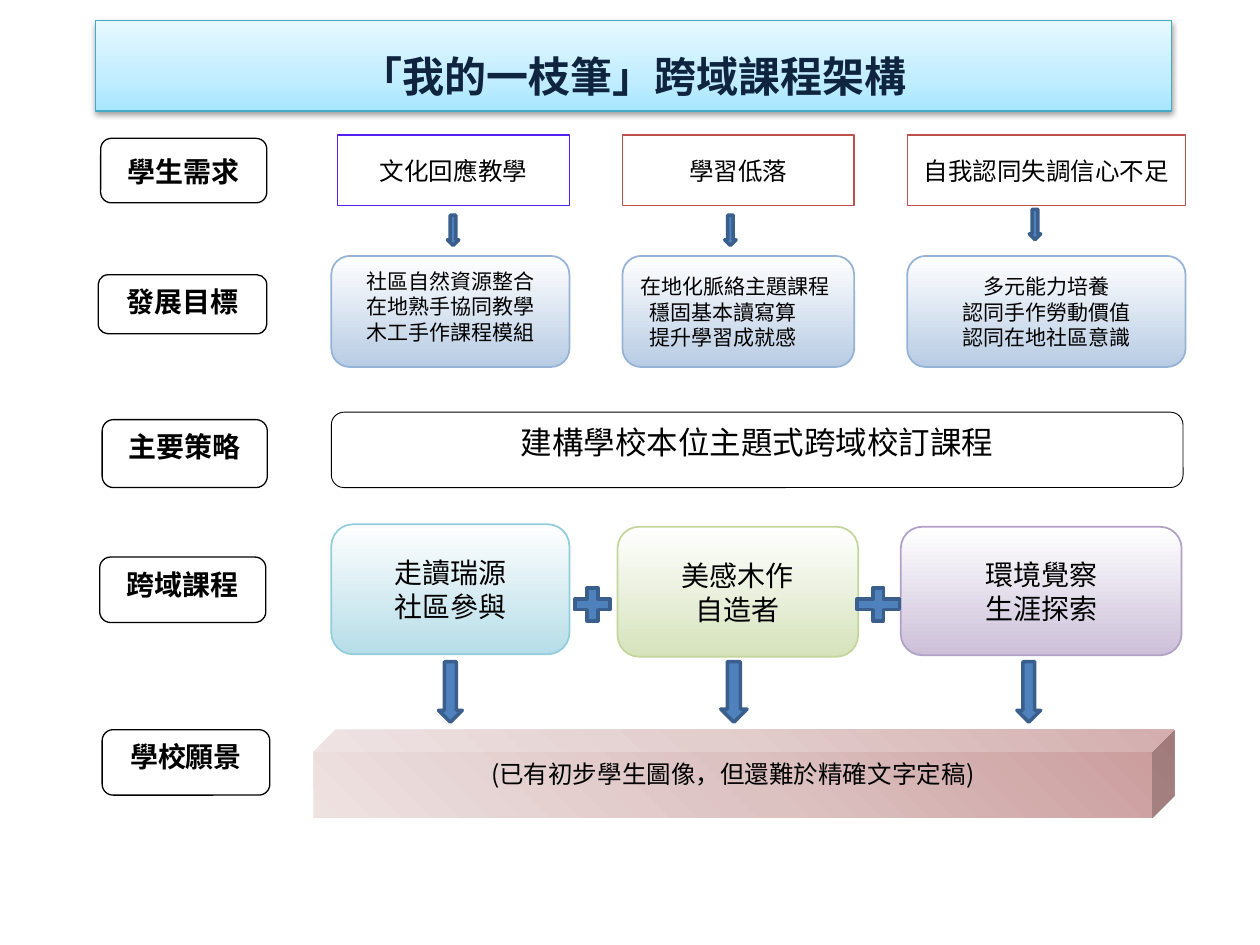
from lxml import etree
from pptx import Presentation
from pptx.dml.color import RGBColor
from pptx.enum.shapes import MSO_SHAPE
from pptx.enum.text import MSO_ANCHOR, PP_ALIGN
from pptx.oxml.ns import qn
from pptx.util import Cm, Pt

ROUNDED = MSO_SHAPE.ROUNDED_RECTANGLE
RECTANGLE = MSO_SHAPE.RECTANGLE
CUBE = MSO_SHAPE.CUBE
DOWN = MSO_SHAPE.DOWN_ARROW
PLUS = MSO_SHAPE.MATH_PLUS
TOP, MIDDLE = MSO_ANCHOR.TOP, MSO_ANCHOR.MIDDLE
LEFT, CENTER = PP_ALIGN.LEFT, PP_ALIGN.CENTER

COLORS = {
    "white": "FFFFFF", "black": "000000", "title": "0F243E", "title_edge": "46AAC5",
    "violet": "551FEF", "red": "C0504D", "arrow": "4F81BD", "arrow_edge": "3A5F8C",
    "goal": "B8CCE4", "goal_edge": "95B3D7",
    "aqua": "B6DDE8", "aqua_edge": "92CDDC",
    "green": "D6E3BC", "green_edge": "C2D69B",
    "purple": "CCC0D9", "purple_edge": "B2A1C7",
    "sky_dark": "A7E6FF", "sky": "C1EDFF", "sky_light": "E7F8FF",
    "rose_dark": "CA9A9A", "rose": "DDC2C2", "rose_light": "EEE2E1",
}
BODY_FONT, TITLE_FONT = "Noto Sans CJK SC", "Noto Sans CJK JP"
LINE_RATIO = 1.22


def rgb(name):
    return RGBColor.from_string(COLORS[name])


def add_xml(parent, tag, **attributes):
    values = {key: str(value) for key, value in attributes.items()}
    return etree.SubElement(parent, qn(tag), values)


def write_text(shape, text, size, font=BODY_FONT, color="black", bold=False,
               anchor=MIDDLE, align=CENTER, indents=()):
    """Fill the shape with one paragraph per line; indents are in cm, by line."""
    frame = shape.text_frame
    frame.word_wrap = True
    frame.vertical_anchor = anchor
    frame.margin_left = frame.margin_right = Cm(0.25)
    frame.margin_top = frame.margin_bottom = Cm(0.13)
    frame.text = text
    for paragraph in frame.paragraphs:
        paragraph.alignment = align
        paragraph.line_spacing = Pt(round(size * LINE_RATIO, 1))
        run = paragraph.runs[0]
        run.font.size, run.font.bold, run.font.name = Pt(size), bold, font
        run.font.color.rgb = rgb(color)
        add_xml(run.font._element, "a:ea", typeface=font)
    for paragraph, indent in zip(frame.paragraphs, indents):
        paragraph._p.get_or_add_pPr().set("marL", str(Cm(indent)))


def paint_gradient(shape, stops, angle=90, corner=False):
    """Linear gradient from (percent, colour) stops, or radial from the top right."""
    shape.fill.gradient()
    gradient = shape._element.spPr.find(qn("a:gradFill"))
    for child in list(gradient):
        gradient.remove(child)
    stop_list = add_xml(gradient, "a:gsLst")
    for percent, color in stops:
        stop = add_xml(stop_list, "a:gs", pos=percent * 1000)
        add_xml(stop, "a:srgbClr", val=COLORS[color])
    if corner:
        center = add_xml(gradient, "a:path", path="circle")
        add_xml(center, "a:fillToRect", l=100000, b=100000)
    else:
        add_xml(gradient, "a:lin", ang=angle * 60000, scaled=0)


class CourseMap:
    def __init__(self, presentation):
        self.slide = presentation.slides.add_slide(presentation.slide_layouts[5])

    def outline(self, shape, color, width):
        shape.line.color.rgb = rgb(color)
        shape.line.width = Pt(width)

    def shape(self, kind, box, fill="white", edge=None, width=0.75):
        shape = self.slide.shapes.add_shape(kind, *map(Cm, box))
        shape.shadow.inherit = False
        shape.fill.solid()
        shape.fill.fore_color.rgb = rgb(fill)
        if edge:
            self.outline(shape, edge, width)
        else:
            shape.line.fill.background()
        return shape

    def title(self, text, box):
        title = self.slide.shapes.title
        title.left, title.top, title.width, title.height = map(Cm, box)
        properties = title._element.spPr
        add_xml(add_xml(properties, "a:prstGeom", prst="roundRect"), "a:avLst")
        paint_gradient(title, [(0, "sky_dark"), (35, "sky"), (100, "sky_light")], angle=270)
        self.outline(title, "title_edge", 0.75)
        shadow = add_xml(add_xml(properties, "a:effectLst"), "a:outerShdw",
                         blurRad=Pt(3.1), dist=Pt(1.6), dir=5400000, rotWithShape=0)
        add_xml(add_xml(shadow, "a:srgbClr", val=COLORS["black"]), "a:alpha", val=38000)
        write_text(title, text, 24, font=TITLE_FONT, color="title", bold=True)
        title.text_frame.margin_top = Cm(0.52)

    def label(self, text, box, anchor=TOP):
        label = self.shape(ROUNDED, box, edge="black")
        write_text(label, text, 16, bold=True, anchor=anchor)

    def need(self, text, box, edge):
        write_text(self.shape(RECTANGLE, box, edge=edge), text, 14)

    def card(self, text, box, color, size, **text_format):
        card = self.shape(ROUNDED, box, edge=color + "_edge", width=1)
        paint_gradient(card, [(0, "white"), (100, color)])
        write_text(card, text, size, **text_format)

    def strategy(self, text, box):
        banner = self.shape(ROUNDED, box, edge="black", width=0.5)
        write_text(banner, text, 18, anchor=TOP)

    def vision(self, text, box):
        block = self.shape(CUBE, box)
        paint_gradient(block, [(0, "rose_dark"), (50, "rose"), (100, "rose_light")], corner=True)
        write_text(block, text, 14, anchor=TOP)

    def sign(self, kind, box):
        self.shape(kind, box, fill="arrow", edge="arrow_edge", width=2)


def main():
    presentation = Presentation()
    presentation.slide_width, presentation.slide_height = Cm(25.4), Cm(19.05)
    course_map = CourseMap(presentation)
    course_map.title("「我的一枝筆」跨域課程架構", (1.93, 0.41, 21.69, 1.83))

    course_map.label("學生需求", (2.03, 2.79, 3.35, 1.3), anchor=MIDDLE)
    course_map.label("發展目標", (1.98, 5.54, 3.4, 1.19))
    course_map.label("主要策略", (2.06, 8.46, 3.33, 1.37))
    course_map.label("跨域課程", (2.01, 11.23, 3.35, 1.32))
    course_map.label("學校願景", (2.06, 14.71, 3.38, 1.32))

    needs = [("文化回應教學", 6.81, 4.67, "violet"),
             ("學習低落", 12.55, 4.67, "red"),
             ("自我認同失調信心不足", 18.29, 5.61, "red")]
    for text, left, width, edge in needs:
        course_map.need(text, (left, 2.72, width, 1.42), edge)

    goals = [("社區自然資源整合\n在地熟手協同教學\n木工手作課程模組", 6.68, 4.8, {"anchor": TOP}),
             ("在地化脈絡主題課程\n穩固基本讀寫算\n提升學習成就感", 12.55, 4.67,
              {"align": LEFT, "indents": (0, 0.19, 0.19)}),
             ("多元能力培養\n認同手作勞動價值\n認同在地社區意識", 18.29, 5.61, {})]
    for text, left, width, text_format in goals:
        course_map.card(text, (left, 5.16, width, 2.24), "goal", 12, **text_format)

    course_map.strategy("建構學校本位主題式跨域校訂課程", (6.68, 8.31, 17.17, 1.52))

    courses = [("走讀瑞源\n社區參與", (6.68, 10.57, 4.8, 2.62), "aqua"),
               ("美感木作\n自造者", (12.45, 10.62, 4.85, 2.62), "green"),
               ("環境覺察\n生涯探索", (18.16, 10.62, 5.66, 2.59), "purple")]
    for text, box, color in courses:
        course_map.card(text, box, color, 16)

    course_map.vision("(已有初步學生圖像，但還難於精確文字定稿)", (6.32, 14.71, 17.35, 1.78))

    for left, top in [(9.02, 4.34), (14.61, 4.34), (20.75, 4.22)]:
        course_map.sign(DOWN, (left, top, 0.23, 0.61))
    for left, width in [(8.84, 0.48), (14.53, 0.53), (20.5, 0.48)]:
        course_map.sign(DOWN, (left, 13.34, width, 1.22))
    for left, width in [(11.46, 0.97), (17.12, 1.17)]:
        course_map.sign(PLUS, (left, 11.73, width, 0.91))

    presentation.save("out.pptx")


if __name__ == "__main__":
    main()
